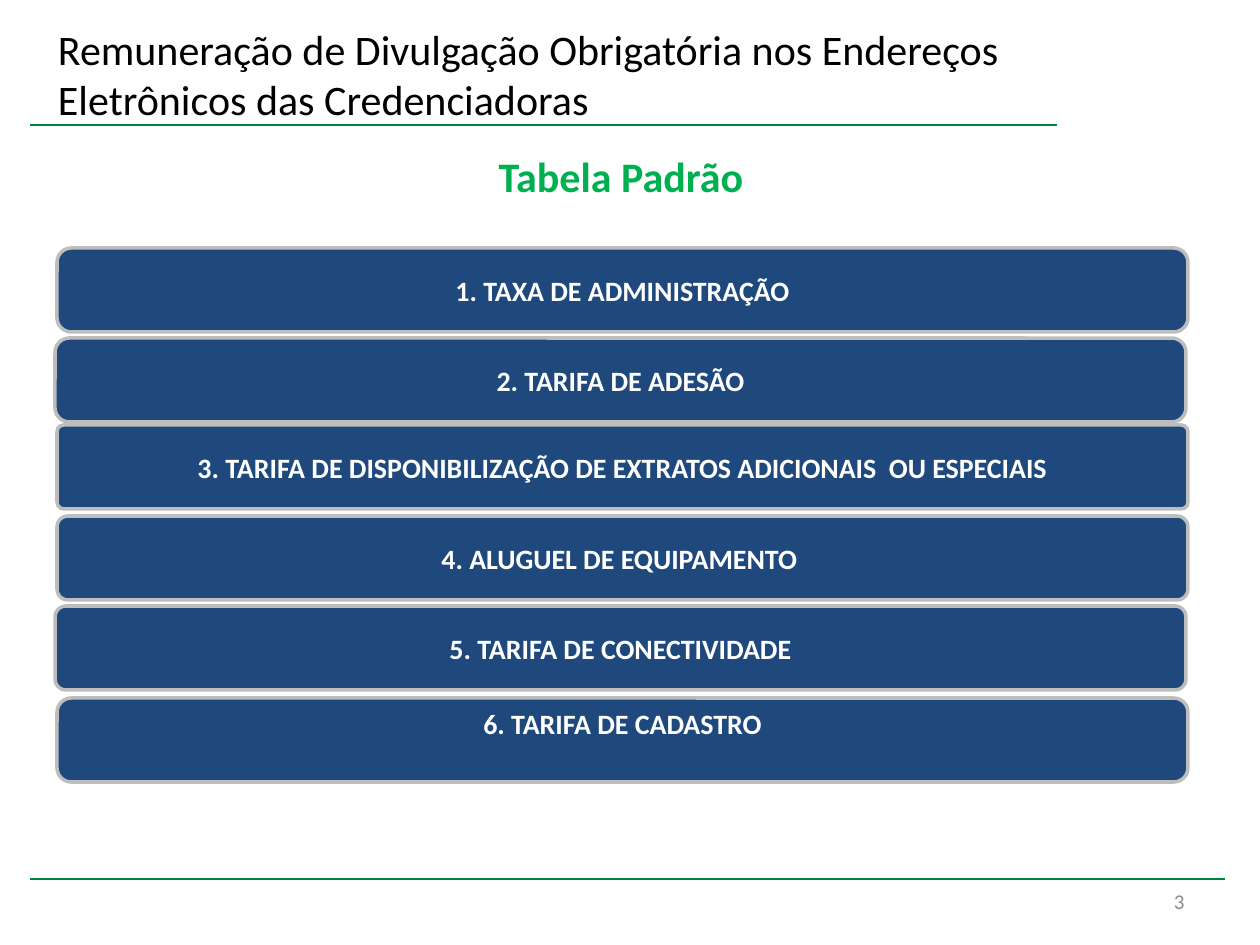
from pptx import Presentation
from pptx.dml.color import RGBColor
from pptx.enum.shapes import MSO_CONNECTOR, MSO_SHAPE
from pptx.enum.text import MSO_ANCHOR, MSO_AUTO_SIZE, PP_ALIGN
from pptx.oxml.ns import qn
from pptx.util import Pt
from lxml.etree import SubElement

PX = 914400 // 126
BLACK = RGBColor(0x00, 0x00, 0x00)
WHITE = RGBColor(0xFF, 0xFF, 0xFF)
NAVY = RGBColor(0x1F, 0x49, 0x7D)
SILVER = RGBColor(0xBD, 0xBD, 0xBD)
GRAY = RGBColor(0x8C, 0x8C, 0x8C)
GREEN = RGBColor(0x00, 0xB0, 0x50)
RULE = RGBColor(0x00, 0x84, 0x3C)


def box(x, y, w, h):
    return [v * PX for v in (x, y, w, h)]


def write(tf, text, size, color, align, bold=False, anchor=MSO_ANCHOR.MIDDLE):
    tf.word_wrap = True
    tf.auto_size = MSO_AUTO_SIZE.NONE
    tf.vertical_anchor = anchor
    p = tf.paragraphs[0]
    p.alignment = align
    r = p.add_run()
    r.text = text
    r.font.name = "Calibri"
    r.font.size = Pt(size)
    r.font.bold = bold
    r.font.color.rgb = color


prs = Presentation()
prs.slide_width, prs.slide_height = 1260 * PX, 945 * PX
s = prs.slides.add_slide(prs.slide_layouts[5])

# Rules under the title and above the page number
for y, right in ((125, 1057), (879, 1225)):
    line = s.shapes.add_connector(MSO_CONNECTOR.STRAIGHT, *box(30, y, right, y))
    line.line.color.rgb = RULE
    line.line.width = Pt(0.75)
    SubElement(line._element.spPr, qn("a:effectLst"))

# Title
title = s.shapes.title
title.left, title.top, title.width, title.height = box(53, 37, 997, 73)
tf = title.text_frame
tf.margin_left = tf.margin_right = tf.margin_top = tf.margin_bottom = 5 * PX
write(tf, "Remuneração de Divulgação Obrigatória nos Endereços "
      "Eletrônicos das Credenciadoras", 24, BLACK, PP_ALIGN.LEFT)

# Subtitle
sp = s.shapes.add_textbox(*box(54, 144, 1134, 63))
write(sp.text_frame, "Tabela Padrão", 24, GREEN, PP_ALIGN.CENTER, True, MSO_ANCHOR.TOP)

# Fee bars: left, top, corner radius, label
bars = [
    (57, 248, 0.17, "1. TAXA DE ADMINISTRAÇÃO"),
    (55, 338, 0.17, "2. TARIFA DE ADESÃO"),
    (57, 425, 0.08, "3. TARIFA DE DISPONIBILIZAÇÃO DE EXTRATOS ADICIONAIS  OU ESPECIAIS"),
    (57, 516, 0.13, "4. ALUGUEL DE EQUIPAMENTO "),
    (55, 606, 0.13, "5. TARIFA DE CONECTIVIDADE"),
    (57, 698, 0.17, "6. TARIFA DE CADASTRO"),
]
for x, y, radius, label in bars:
    sp = s.shapes.add_shape(MSO_SHAPE.ROUNDED_RECTANGLE, *box(x, y, 1131, 84))
    sp.shadow.inherit = False
    sp.adjustments[0] = radius
    sp.fill.solid()
    sp.fill.fore_color.rgb = NAVY
    sp.line.color.rgb = SILVER
    sp.line.width = Pt(2)
    write(sp.text_frame, label, 16, WHITE, PP_ALIGN.CENTER, True)

# The last label sits higher in its bar
sp.text_frame.margin_bottom = 40 * PX

# Page number
sp = s.shapes.add_textbox(*box(903, 876, 294, 50))
write(sp.text_frame, "3", 12, GRAY, PP_ALIGN.RIGHT)

prs.save("out.pptx")
